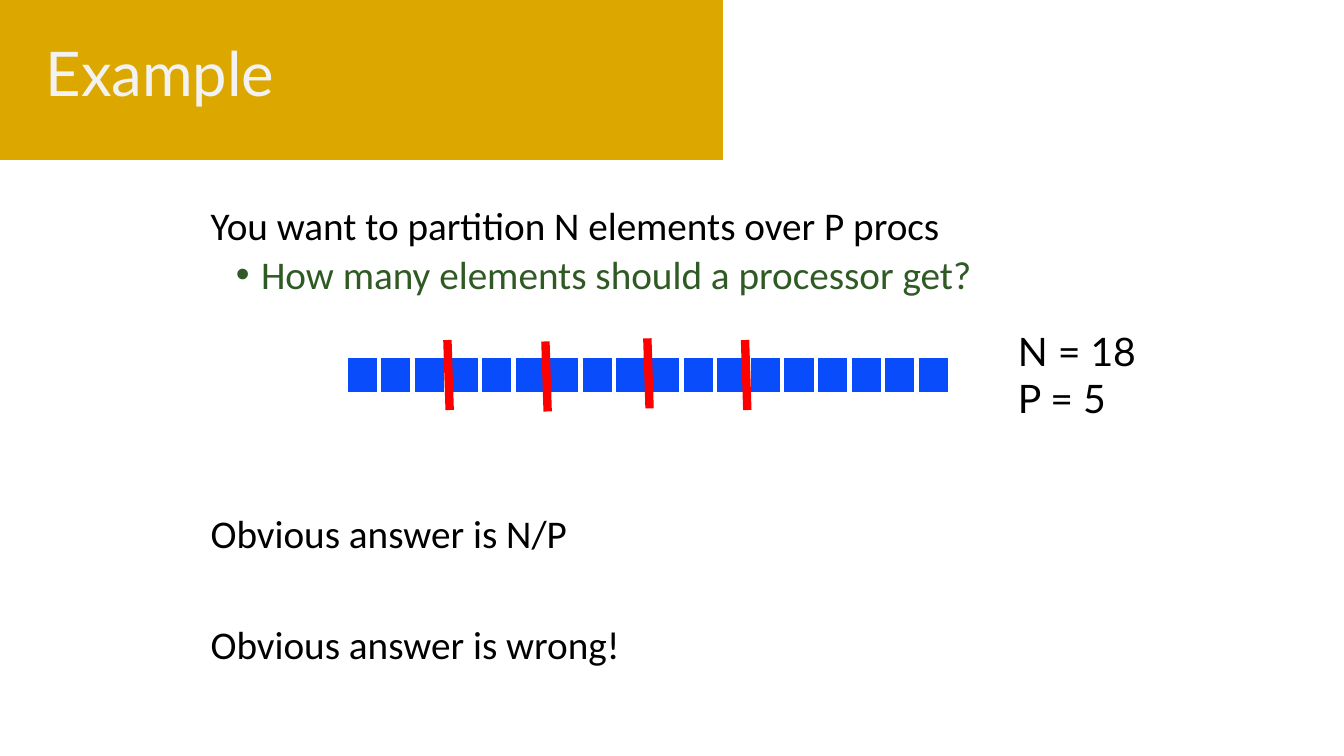
import pptx
import pptx.dml.color
import pptx.enum.shapes
import pptx.enum.text
import pptx.oxml
import pptx.oxml.ns
import pptx.util

Pt = pptx.util.Pt
Anchor = pptx.enum.text.MSO_ANCHOR
Shape = pptx.enum.shapes.MSO_SHAPE
COLOURS = {
    "band": "DCA800",
    "title": "F2F2F2",
    "text": "000000",
    "question": "2F5A24",
    "element": "084CFC",
    "cut": "FF0000",
    "outline": "FFFFFF",
}
ELEMENTS = 18
PITCH = 24
CELL = (22.4, 25.9)
# Top of each cut, from the row's top left corner
CUTS = [(72, -12), (142, -11), (214.8, -13.2), (284.6, -12)]
CUT_LEAN, CUT_HEIGHT = 1.6, 50


def colour(name):
    return pptx.dml.color.RGBColor.from_string(COLOURS[name])


def place(shape, box):
    shape.left, shape.top, shape.width, shape.height = map(Pt, box)


def write(para, text, size=28, font="Calibri", fill="text", leading=0.9,
          before=0, margin=0, bullet=None):
    """Fill a paragraph; a bullet hangs 18 points left of the margin."""
    span = para.add_run()
    span.text = text
    span.font.size = Pt(size)
    span.font.name = font
    span.font.color.rgb = colour(fill)
    para.alignment = pptx.enum.text.PP_ALIGN.LEFT
    para.line_spacing = leading
    para.space_before = Pt(before)
    para.space_after = Pt(0)
    properties = para._p.get_or_add_pPr()
    properties.set("marL", str(Pt(margin)))
    properties.set("indent", str(Pt(-18 if bullet else 0)))
    mark = pptx.oxml.parse_xml(
        "<a:%s %s/>" % ("buChar" if bullet else "buNone",
                        pptx.oxml.ns.nsdecls("a")))
    if bullet:
        mark.set("char", bullet)
    properties.append(mark)


def add_block(shapes, box, fill, kind=Shape.RECTANGLE):
    block = shapes.add_shape(kind, *map(Pt, box))
    block.shadow.inherit = False
    block.fill.solid()
    block.fill.fore_color.rgb = colour(fill)
    block.line.color.rgb = colour("outline")
    block.line.width = Pt(1.5)
    return block


def add_header(page, box):
    left, top, width, height = box
    band = add_block(page.shapes, box, "band", Shape.FLOWCHART_PROCESS)
    title = page.shapes.title
    title._element.addprevious(band._element)
    place(title, (left + 26, top + 3.6, width - 26, height - 12.2))
    frame = title.text_frame
    frame.auto_size = pptx.enum.text.MSO_AUTO_SIZE.NONE
    frame.vertical_anchor = Anchor.MIDDLE
    write(frame.paragraphs[0], "Example", size=44, font="Lato", fill="title")


def add_body(page, box):
    body = page.placeholders[1]
    place(body, box)
    frame = body.text_frame
    frame.auto_size = pptx.enum.text.MSO_AUTO_SIZE.NONE
    frame.vertical_anchor = Anchor.TOP
    write(frame.paragraphs[0], "You want to partition N elements over P procs",
          margin=18)
    question = frame.add_paragraph()
    question.level = 1
    write(question, "How many elements should a processor get?",
          fill="question", before=4.5, margin=54, bullet="•")
    write(frame.add_paragraph(), "Obvious answer is N/P", before=155, margin=18)
    write(frame.add_paragraph(), "Obvious answer is wrong!", before=49,
          margin=18)


def add_partition(page, left, top):
    """Draw the row of elements and the cuts between processors."""
    row = page.shapes.add_group_shape()
    for index in range(ELEMENTS):
        add_block(row.shapes, (left + index * PITCH, top, *CELL), "element")
    cuts = page.shapes.add_group_shape()
    for across, down in CUTS:
        x, y = left + across, top + down
        cut = cuts.shapes.add_connector(
            pptx.enum.shapes.MSO_CONNECTOR.STRAIGHT,
            Pt(x), Pt(y), Pt(x + CUT_LEAN), Pt(y + CUT_HEIGHT))
        cut.line.color.rgb = colour("cut")
        cut.line.width = Pt(6)
        cut._element.spPr.append(pptx.oxml.parse_xml(
            "<a:effectLst %s/>" % pptx.oxml.ns.nsdecls("a")))


def add_values(page, box):
    frame = page.shapes.add_textbox(*map(Pt, box)).text_frame
    frame.word_wrap = False
    frame.auto_size = pptx.enum.text.MSO_AUTO_SIZE.SHAPE_TO_FIT_TEXT
    write(frame.paragraphs[0], "N = 18", font="Lato", leading=1.0)
    write(frame.add_paragraph(), "P = 5", font="Lato", leading=1.0)


def main():
    deck = pptx.Presentation()
    deck.slide_width, deck.slide_height = Pt(960), Pt(540)
    page = deck.slides.add_slide(deck.slide_layouts[1])
    add_header(page, (-0.7, -1.4, 517.7, 116.6))
    add_body(page, (125.3, 144, 769, 342.7))
    add_partition(page, 247.6, 254.9)
    add_values(page, (720, 230.4, 102.2, 74.9))
    deck.save("out.pptx")


if __name__ == "__main__":
    main()
